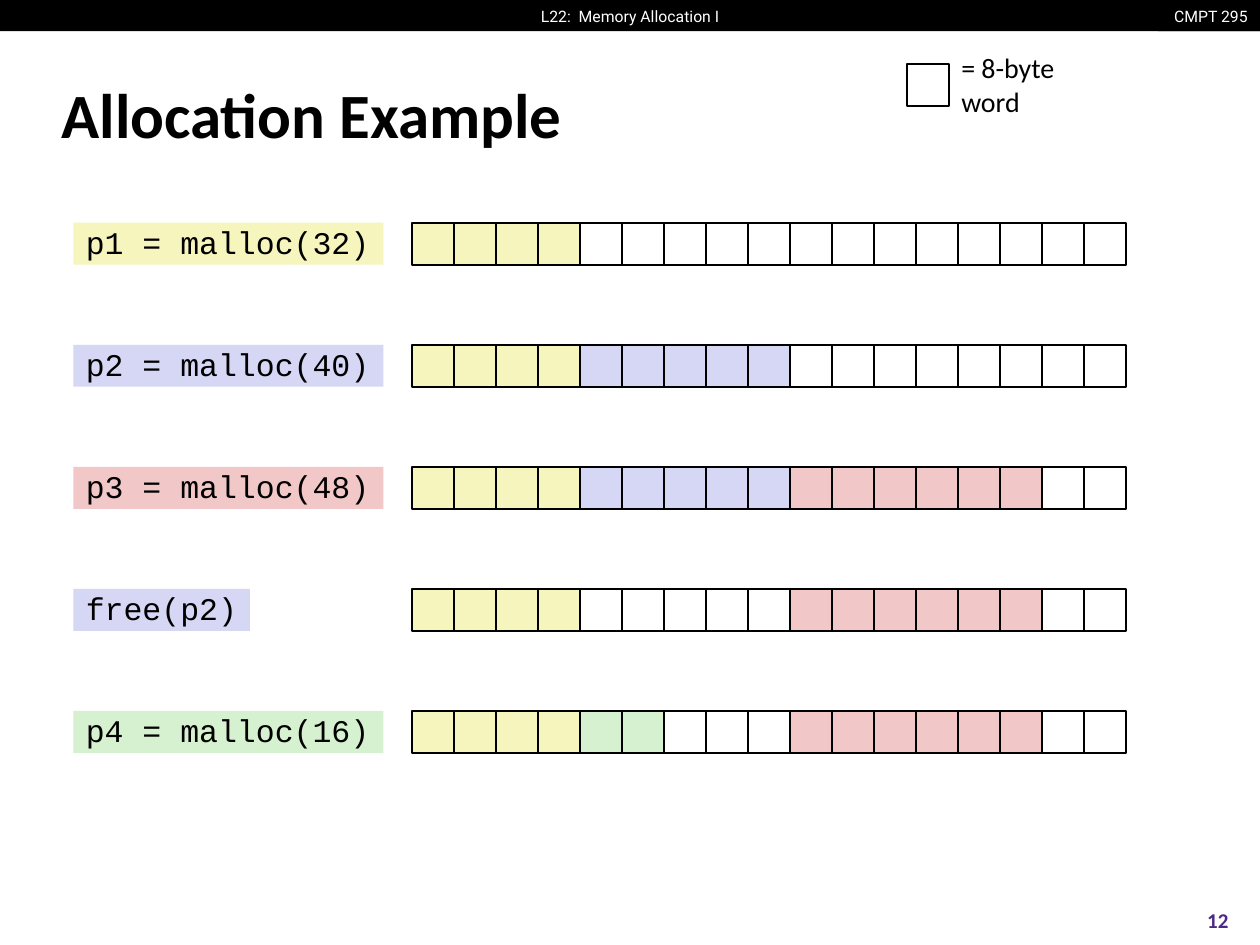
from pptx import Presentation
from pptx.dml.color import RGBColor
from pptx.enum.shapes import MSO_SHAPE as Shape
from pptx.enum.text import MSO_ANCHOR as Anchor, PP_ALIGN as Align
from pptx.util import Cm, Pt

COLORS = {
    "black": "000000", "white": "FFFFFF", "purple": "4B2A85",
    "p1": "F6F5BD", "p2": "D6D6F5", "p3": "F1C7C7", "p4": "D5F1CF",
    "unused": "FFFFFF",
}

STEPS = [
    ("p1 = malloc(32)", "p1", 6.25, [("p1", 4), ("unused", 13)]),
    ("p2 = malloc(40)", "p2", 6.25, [("p1", 4), ("p2", 5), ("unused", 8)]),
    ("p3 = malloc(48)", "p3", 6.25,
     [("p1", 4), ("p2", 5), ("p3", 6), ("unused", 2)]),
    ("free(p2)", "p2", 3.56,
     [("p1", 4), ("unused", 5), ("p3", 6), ("unused", 2)]),
    ("p4 = malloc(16)", "p4", 6.25,
     [("p1", 4), ("p4", 2), ("unused", 3), ("p3", 6), ("unused", 2)]),
]

WORD = 14.4 / 17
HEAP_LEFT, CALL_LEFT = 8.3, 1.48
FIRST_ROW, ROW_PITCH = 4.49, 2.46
BAR_HEIGHT = 0.63


def rgb(name):
    return RGBColor.from_string(COLORS[name])


def add_box(shapes, left, top, width, height, fill, outlined=False):
    box = shapes.add_shape(Shape.RECTANGLE, Cm(left), Cm(top), Cm(width), Cm(height))
    box.shadow.inherit = False
    box.fill.solid()
    box.fill.fore_color.rgb = rgb(fill)
    if outlined:
        box.line.color.rgb = rgb("black")
        box.line.width = Pt(1)
    else:
        box.line.fill.background()
    return box


def write(box, text, font, size, color="black", bold=False, align=Align.LEFT,
          anchor=Anchor.MIDDLE, wrap=True, margin=0.13, spacing=None):
    frame = box.text_frame
    frame.word_wrap = wrap
    frame.vertical_anchor = anchor
    frame.margin_left = frame.margin_right = Cm(0.25)
    frame.margin_top = frame.margin_bottom = Cm(margin)
    line = frame.paragraphs[0]
    line.text = text
    line.alignment = align
    line.line_spacing = spacing
    line.font.name = font
    line.font.size = Pt(size)
    line.font.bold = bold
    line.font.color.rgb = rgb(color)


def add_label(shapes, left, top, width, height, text, font, size, **style):
    label = shapes.add_textbox(Cm(left), Cm(top), Cm(width), Cm(height))
    write(label, text, font, size, **style)


def add_frame(shapes):
    heading = dict(color="white", anchor=Anchor.TOP, wrap=False)
    add_box(shapes, 0, 0, 25.4, BAR_HEIGHT, "black")
    course = add_box(shapes, 23.34, 0, 2.06, BAR_HEIGHT, "black")
    write(course, "CMPT 295", "Roboto", 9, align=Align.RIGHT, **heading)
    add_label(shapes, 10.63, 0, 4.14, BAR_HEIGHT, "L22:  Memory Allocation I",
              "Roboto", 9, align=Align.CENTER, **heading)
    add_label(shapes, 0.99, 1.22, 23.34, 2.11, "Allocation Example",
              "Calibri", 36, bold=True)
    add_label(shapes, 23.7, 18.03, 1.7, 1.02, "12", "Calibri", 12,
              color="purple", bold=True, align=Align.CENTER)


def add_step(shapes, top, call, owner, width, blocks):
    heap = shapes.add_group_shape().shapes
    words = [name for name, count in blocks for _ in range(count)]
    for column, name in enumerate(words):
        add_box(heap, HEAP_LEFT + column * WORD, top, WORD, WORD, name, outlined=True)
    tag = add_box(shapes, CALL_LEFT, top, width, WORD, owner)
    write(tag, call, "Courier New", 18, wrap=False, margin=0, spacing=0.94)


def add_legend(shapes):
    legend = shapes.add_group_shape().shapes
    add_box(legend, 18.28, 1.29, WORD, WORD, "unused", outlined=True)
    add_label(legend, 19.13, 1.28, 3.56, WORD, "= 8-byte word", "Calibri", 16,
              wrap=False, margin=0)


def main():
    deck = Presentation()
    deck.slide_width, deck.slide_height = Cm(25.4), Cm(19.05)
    shapes = deck.slides.add_slide(deck.slide_layouts[6]).shapes
    add_frame(shapes)
    for row, step in enumerate(STEPS):
        add_step(shapes, FIRST_ROW + row * ROW_PITCH, *step)
    add_legend(shapes)
    deck.save("out.pptx")


if __name__ == "__main__":
    main()
